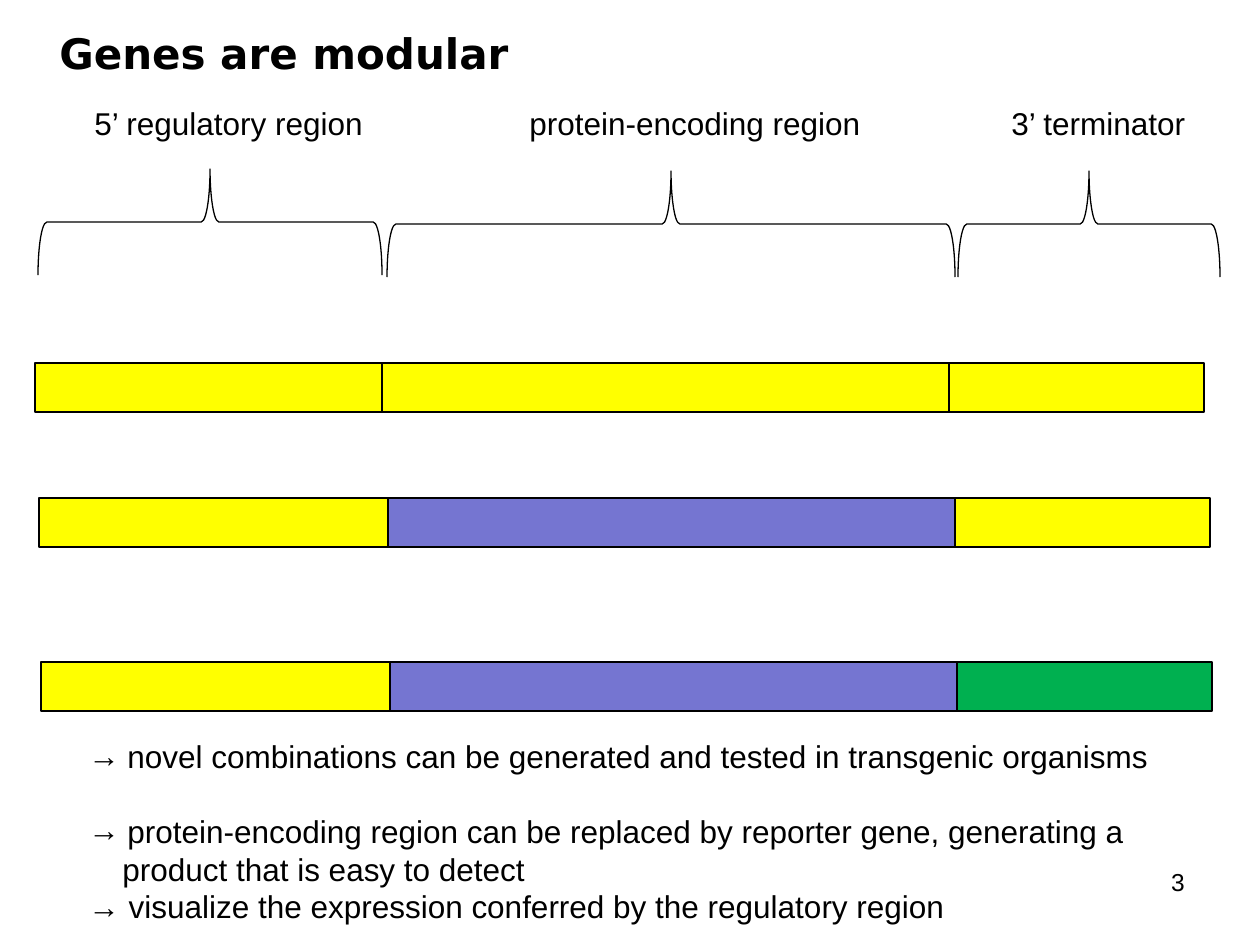
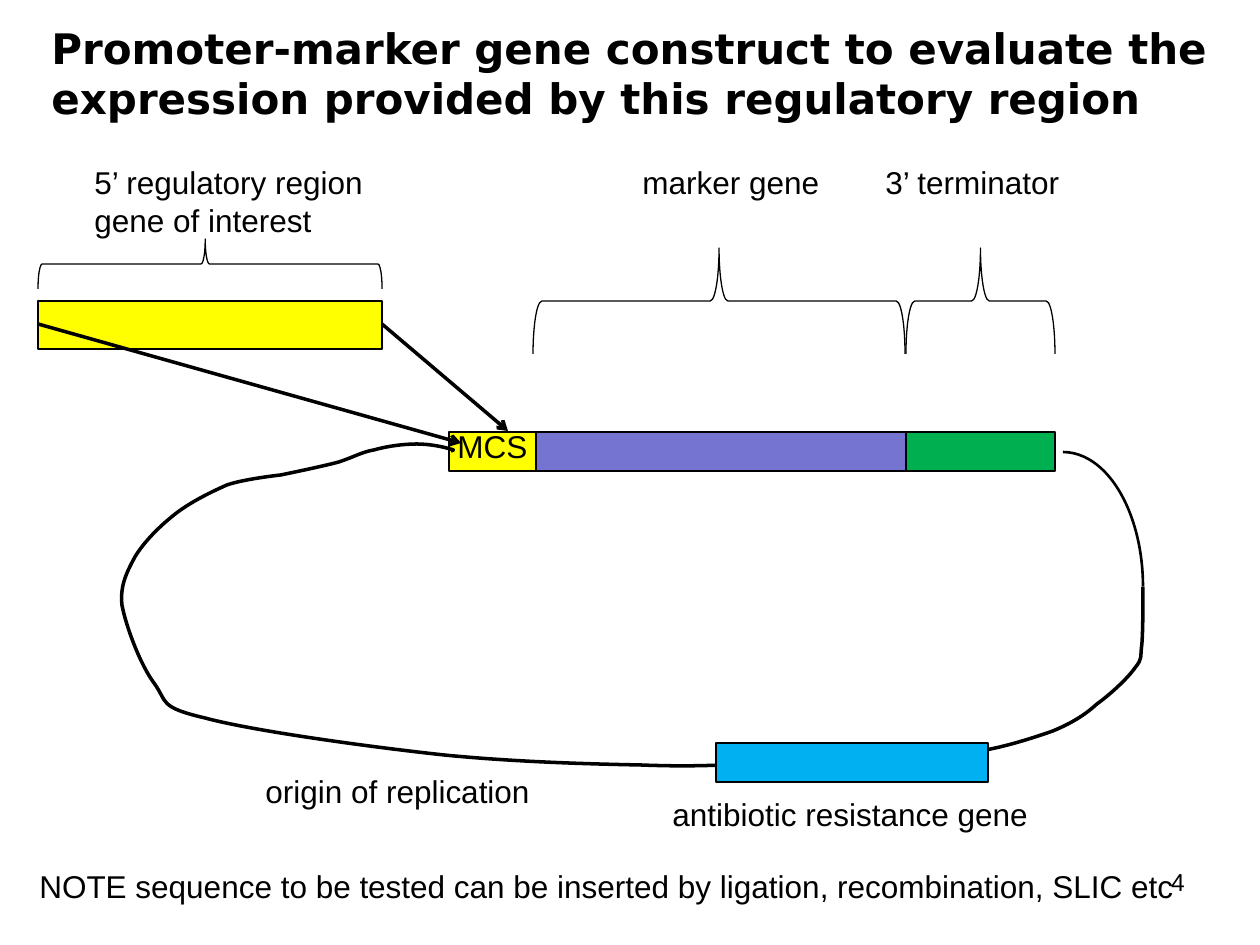
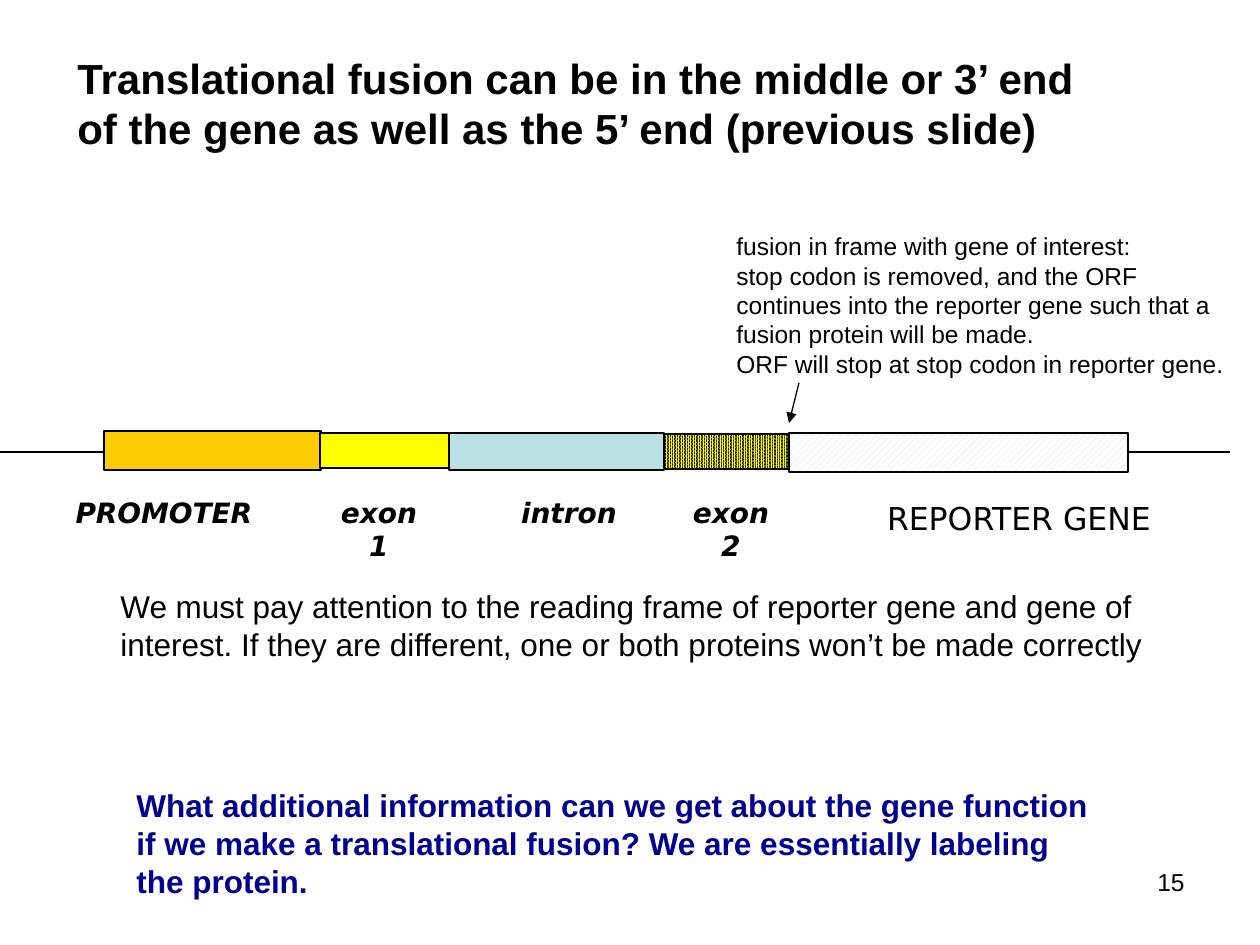
from lxml import etree
from pptx import Presentation
from pptx.dml.color import RGBColor
from pptx.enum.dml import MSO_PATTERN
from pptx.enum.shapes import MSO_CONNECTOR, MSO_SHAPE
from pptx.enum.text import PP_ALIGN
from pptx.oxml.ns import qn
from pptx.util import Pt

PX = 914400 / 126
RECTANGLE = MSO_SHAPE.RECTANGLE
BRACE = MSO_SHAPE.LEFT_BRACE
ARC = MSO_SHAPE.ARC
STRAIGHT = MSO_CONNECTOR.STRAIGHT
DOTS = MSO_PATTERN.PERCENT_90
STRIPES = MSO_PATTERN.WIDE_UPWARD_DIAGONAL
LEFT, CENTER, RIGHT = PP_ALIGN.LEFT, PP_ALIGN.CENTER, PP_ALIGN.RIGHT

ARIAL = "Arial"
DEJAVU = "DejaVu Sans"
BLACK = "000000"
WHITE = "FFFFFF"
YELLOW = "FFFF00"
VIOLET = "7575D1"
GREEN = "00B050"
SKY = "00B0F0"
ORANGE = "FFCC00"
PALE_BLUE = "BBE0E3"
NAVY = "000090"
color = RGBColor.from_string


def add_shape(slide, kind, left, top, width, height, fill=None, weight=0.75):
    if kind == BRACE:
        left, top = left + (width - height) / 2, top + (height - width) / 2
        width, height = height, width
    box = [round(value * PX) for value in (left, top, width, height)]
    shape = slide.shapes.add_shape(kind, *box)
    shape.shadow.inherit = False
    shape.rotation = 90 if kind == BRACE else 0
    if fill:
        shape.fill.solid()
        shape.fill.fore_color.rgb = color(fill)
    else:
        shape.fill.background()
    shape.line.color.rgb = color(BLACK)
    shape.line.width = Pt(weight)
    return shape


def add_text(slide, lines, left, top, width, height, size=18, font=ARIAL,
             ink=BLACK, bold=False, italic=False, align=LEFT):
    box = [round(value * PX) for value in (left, top, width, height)]
    frame = slide.shapes.add_textbox(*box).text_frame
    frame.word_wrap = True
    for index, line in enumerate(lines):
        paragraph = frame.paragraphs[0] if index == 0 else frame.add_paragraph()
        paragraph.alignment = align
        run = paragraph.add_run()
        run.text = line
        run.font.size = Pt(size)
        run.font.name = font
        run.font.color.rgb = color(ink)
        run.font.bold = bold
        run.font.italic = italic
    return frame


presentation = Presentation()
presentation.slide_width = round(1260 * PX)
presentation.slide_height = round(945 * PX)
blank = presentation.slide_layouts[6]
modular, construct, fusion = [presentation.slides.add_slide(blank) for _ in range(3)]

titles = [
    (modular, "Genes are modular", 47, 21, 491, 63, DEJAVU),
    (construct, "Promoter-marker gene construct to evaluate the expression "
     "provided by this regulatory region", 39, 16, 1188, 115, DEJAVU),
    (fusion, "Translational fusion can be in the middle or 3’ end of the gene "
     "as well as the 5’ end (previous slide)", 65, 46, 1047, 115, ARIAL),
]
for slide, title, left, top, width, height, font in titles:
    add_text(slide, [title], left, top, width, height, 24, font, bold=True)

for slide, number in ((modular, "3"), (construct, "4"), (fusion, "15")):
    add_text(slide, [number], 903, 861, 294, 66, 14, align=RIGHT)

for left, top, width in ((38, 169, 344), (387, 171, 568), (958, 171, 262)):
    add_shape(modular, BRACE, left, top, width, 106)

region_labels = [
    (modular, ["5’ regulatory region\tprotein-encoding region\t3’ terminator"],
     98, 1127, 51, (435, 917)),
    (construct, ["5’ regulatory region\tmarker gene\t3’ terminator", "gene of interest"],
     157, 999, 89, (548, 791)),
]
for slide, lines, top, width, height, stops in region_labels:
    frame = add_text(slide, lines, 82, top, width, height)
    properties = frame.paragraphs[0]._p.get_or_add_pPr()
    tab_list = etree.SubElement(properties, qn("a:tabLst"))
    for stop in stops:
        tab = etree.SubElement(tab_list, qn("a:tab"))
        tab.set("pos", str(round(stop * PX)))
        tab.set("algn", "l")

gene_rows = [
    (363, (35, 382, 949), (YELLOW, YELLOW, YELLOW)),
    (498, (39, 388, 955), (YELLOW, VIOLET, YELLOW)),
    (662, (41, 390, 957), (YELLOW, VIOLET, GREEN)),
]
for top, lefts, fills in gene_rows:
    for left, width, fill in zip(lefts, (349, 567, 255), fills):
        add_shape(modular, RECTANGLE, left, top, width, 49, fill)

points = add_text(modular, [
    "novel combinations can be generated and tested in transgenic organisms",
    "protein-encoding region can be replaced by reporter gene, generating a",
    "product that is easy to detect",
    "→ visualize the expression conferred by the regulatory region",
], 76, 731, 1095, 210)
for paragraph, margin, indent, bullet in zip(
        points.paragraphs, (39, 39, 34, 39), (-39, -39, 0, -39), ("→", "→", None, None)):
    properties = paragraph._p.get_or_add_pPr()
    properties.set("marL", str(round(margin * PX)))
    properties.set("indent", str(round(indent * PX)))
    if bullet:
        etree.SubElement(properties, qn("a:buFont")).set("typeface", ARIAL)
        etree.SubElement(properties, qn("a:buChar")).set("char", bullet)
points.paragraphs[1].space_before = Pt(21)

insert_brace = add_shape(construct, BRACE, 38, 239, 344, 50)
insert_brace.adjustments[1] = 0.514
for left, width in ((533, 372), (906, 149)):
    add_shape(construct, BRACE, left, 248, width, 106)

add_shape(construct, RECTANGLE, 38, 301, 344, 48, YELLOW)
for left, width, fill in ((449, 87, YELLOW), (536, 370, VIOLET), (906, 149, GREEN)):
    add_shape(construct, RECTANGLE, left, 432, width, 39, fill)
add_shape(construct, ARC, 983, 452, 160, 269, weight=1.5)

plasmid_start = (1143, 587)
plasmid_curves = [
    ((1143, 609), (1143, 630), (1142, 644)),
    ((1140, 658), (1143, 658), (1135, 668)),
    ((1128, 678), (1111, 694), (1097, 704)),
    ((1085, 715), (1072, 723), (1053, 731)),
    ((1033, 738), (1005, 747), (980, 751)),
    ((955, 756), (901, 756), (901, 756)),
    ((854, 759), (806, 761), (759, 764)),
    ((716, 765), (693, 767), (641, 765)),
    ((588, 764), (515, 762), (444, 755)),
    ((370, 747), (253, 731), (205, 718)),
    ((158, 707), (168, 702), (154, 683)),
    ((140, 664), (126, 626), (122, 605)),
    ((120, 585), (127, 572), (135, 557)),
    ((144, 542), (159, 527), (174, 515)),
    ((189, 503), (209, 493), (227, 485)),
    ((244, 479), (281, 475), (281, 475)),
    ((300, 471), (324, 466), (339, 462)),
    ((354, 457), (362, 452), (374, 450)),
    ((388, 446), (404, 444), (417, 444)),
    ((430, 444), (444, 447), (450, 449)),
    ((455, 450), (454, 450), (451, 451)),
]
knots = [plasmid_start] + [curve[-1] for curve in plasmid_curves]
origin_x = min(x for x, y in knots)
origin_y = min(y for x, y in knots)
builder = construct.shapes.build_freeform(*plasmid_start, scale=PX)
builder.add_line_segments(knots[1:], close=False)
plasmid = builder.convert_to_shape()
segments = list(plasmid._element.iter(qn("a:lnTo")))
for segment, curve in zip(segments, plasmid_curves):
    bezier = etree.Element(qn("a:cubicBezTo"))
    for x, y in curve:
        point = etree.SubElement(bezier, qn("a:pt"))
        point.set("x", str(x - origin_x))
        point.set("y", str(y - origin_y))
    segment.getparent().replace(segment, bezier)
plasmid.shadow.inherit = False
plasmid.fill.background()
plasmid.line.color.rgb = color(BLACK)
plasmid.line.width = Pt(2)

add_shape(construct, RECTANGLE, 716, 743, 272, 39, SKY)

construct_labels = [
    ("antibiotic resistance gene", 660, 789, 390),
    ("origin of replication", 253, 766, 300),
    ("MCS", 445, 421, 100),
    ("NOTE sequence to be tested can be inserted by ligation, "
     "recombination, SLIC etc", 27, 861, 1171),
]
for text, left, top, width in construct_labels:
    add_text(construct, [text], left, top, width, 51)

gene_parts = [
    (104, 431, 217, 39, ORANGE),
    (320, 433, 129, 35, YELLOW),
    (449, 433, 215, 37, PALE_BLUE),
]
for part in gene_parts:
    add_shape(fusion, RECTANGLE, *part)

patterned_parts = [
    (664, 434, 130, 35, DOTS, YELLOW, BLACK),
    (789, 433, 339, 39, STRIPES, PALE_BLUE, WHITE),
]
for left, top, width, height, pattern, front, back in patterned_parts:
    part = add_shape(fusion, RECTANGLE, left, top, width, height)
    part.fill.patterned()
    part.fill.pattern = pattern
    part.fill.fore_color.rgb = color(front)
    part.fill.back_color.rgb = color(back)

for text, left, width, height in (("PROMOTER", 45, 238, 47), ("exon 1", 328, 102, 81),
                                  ("intron", 507, 124, 47), ("exon 2", 680, 102, 81)):
    add_text(fusion, [text], left, 489, width, height, 16, DEJAVU,
             bold=True, italic=True, align=CENTER)
add_text(fusion, ["REPORTER GENE"], 809, 493, 420, 51, font=DEJAVU, align=CENTER)

add_text(fusion, [
    "fusion in frame with gene of interest:",
    "stop codon is removed, and the ORF",
    "continues into the reporter gene such that a",
    "fusion protein will be made.",
    "ORF will stop at stop codon in reporter gene.",
], 724, 225, 520, 199, 14)
add_text(fusion, [
    "We must pay attention to the reading frame of reporter gene and gene of interest. "
    "If they are different, one or both proteins won’t be made correctly",
], 108, 581, 1091, 89)
add_text(fusion, [
    "What additional information can we get about the gene function if we make a "
    "translational fusion? We are essentially labeling the protein.",
], 124, 780, 992, 127, ink=NAVY, bold=True)

connectors = [
    (construct, 382, 324, 508, 431, 2, "arrow"),
    (construct, 38, 324, 461, 443, 2, "arrow"),
    (fusion, 104, 452, 0, 452, 0.75, None),
    (fusion, 1230, 452, 1127, 452, 0.75, None),
    (fusion, 799, 383, 789, 423, 0.75, "triangle"),
]
for slide, *ends, weight, arrowhead in connectors:
    connector = slide.shapes.add_connector(STRAIGHT, *[round(end * PX) for end in ends])
    connector.line.color.rgb = color(BLACK)
    connector.line.width = Pt(weight)
    properties = connector._element.spPr
    if arrowhead:
        line = properties.find(qn("a:ln"))
        etree.SubElement(line, qn("a:tailEnd")).set("type", arrowhead)
    etree.SubElement(properties, qn("a:effectLst"))

presentation.save("out.pptx")
